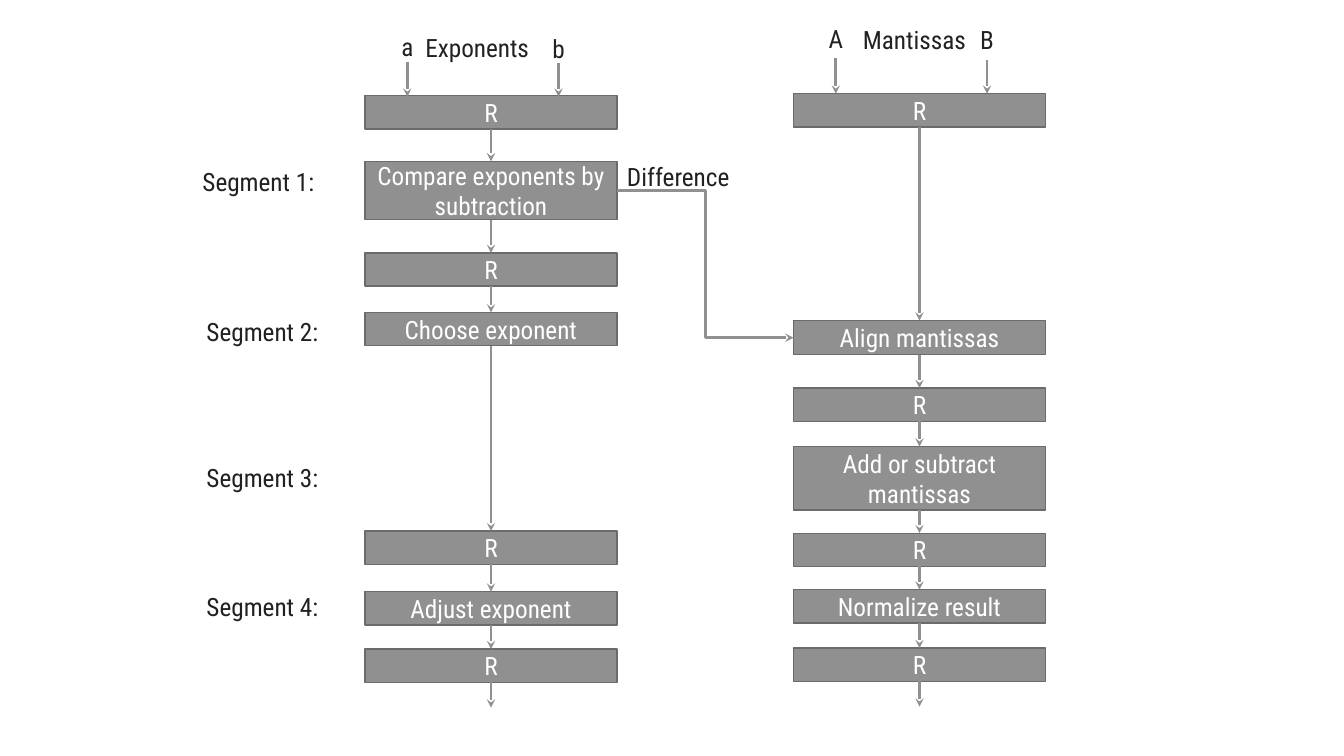
from dataclasses import dataclass

from lxml import etree
from pptx import Presentation
from pptx.dml.color import RGBColor
from pptx.enum import shapes, text
from pptx.oxml import ns
from pptx.util import Inches, Pt


@dataclass(frozen=True)
class Theme:
    font: str = "Roboto Condensed"
    size: float = 18
    ink: str = "212121"
    box_text: str = "FFFFFF"
    fill: str = "909090"
    border: str = "6B6B6B"
    border_width: float = 1
    arrow_width: float = 2


THEME = Theme()
BOX_WIDTH = 2.5
EXIT_LENGTH = 0.25
LABEL_WIDTH, LETTER_WIDTH, LABEL_HEIGHT = 1.5, 0.5, 0.4

# Each stage: wording, top, height
EXPONENT_STAGES = [
    ("R", 0.95, 0.33),
    ("Compare exponents by subtraction", 1.6, 0.58),
    ("R", 2.51, 0.33),
    ("Choose exponent", 3.1, 0.33),
    ("R", 5.27, 0.33),
    ("Adjust exponent", 5.87, 0.33),
    ("R", 6.44, 0.33),
]
MANTISSA_STAGES = [
    ("R", 0.93, 0.33),
    ("Align mantissas", 3.18, 0.34),
    ("R", 3.85, 0.33),
    ("Add or subtract mantissas", 4.43, 0.63),
    ("R", 5.29, 0.33),
    ("Normalize result", 5.85, 0.33),
    ("R", 6.43, 0.33),
]
EXPONENT_LEFT, MANTISSA_LEFT = 3.62, 7.87

# Each input: letter, middle, label top, arrow top, arrow end
INPUTS = [
    ("a", 4.04, 0.26, 0.62, 0.96),
    ("b", 5.54, 0.28, 0.63, 0.96),
    ("A", 8.29, 0.18, 0.58, 0.93),
    ("B", 9.79, 0.19, 0.6, 0.93),
]
# Each label: wording, left, top
LABELS = [
    ("Exponents", 4.12, 0.27),
    ("Mantissas", 8.46, 0.19),
    ("Difference", 6.12, 1.55),
    ("Segment 1:", 1.91, 1.6),
    ("Segment 2:", 1.95, 3.09),
    ("Segment 3:", 1.95, 4.54),
    ("Segment 4:", 1.95, 5.82),
]


def color(value):
    return RGBColor.from_string(value)


def write(frame, wording, ink, align):
    frame.word_wrap = True
    para = frame.paragraphs[0]
    para.alignment = align
    span = para.add_run()
    span.text = wording
    span.font.name = THEME.font
    span.font.size = Pt(THEME.size)
    span.font.color.rgb = color(ink)


def add_label(page, wording, left, top, width=LABEL_WIDTH, align=text.PP_ALIGN.LEFT):
    box = page.shapes.add_textbox(
        Inches(left), Inches(top), Inches(width), Inches(LABEL_HEIGHT))
    write(box.text_frame, wording, THEME.ink, align)


def add_stage(page, wording, left, top, height):
    box = page.shapes.add_shape(
        shapes.MSO_SHAPE.RECTANGLE,
        Inches(left), Inches(top), Inches(BOX_WIDTH), Inches(height))
    box.shadow.inherit = False
    box.fill.solid()
    box.fill.fore_color.rgb = color(THEME.fill)
    box.line.color.rgb = color(THEME.border)
    box.line.width = Pt(THEME.border_width)
    box.text_frame.vertical_anchor = text.MSO_ANCHOR.MIDDLE
    write(box.text_frame, wording, THEME.box_text, text.PP_ALIGN.CENTER)
    return box


def add_arrow(page, start=(0, 0), end=(0, 0), kind=shapes.MSO_CONNECTOR.STRAIGHT):
    arrow = page.shapes.add_connector(
        kind, *(Inches(value) for value in (*start, *end)))
    arrow.line.color.rgb = color(THEME.fill)
    arrow.line.width = Pt(THEME.arrow_width)
    etree.SubElement(arrow.line._get_or_add_ln(), ns.qn("a:tailEnd"), type="stealth")
    etree.SubElement(arrow._element.spPr, ns.qn("a:effectLst"))
    return arrow


def add_column(page, left, stages):
    """Stack the stages, join each to the next and add the exit arrow."""
    boxes = [add_stage(page, wording, left, top, height)
             for wording, top, height in stages]
    for upper, lower in zip(boxes, boxes[1:]):
        arrow = add_arrow(page)
        arrow.begin_connect(upper, 2)
        arrow.end_connect(lower, 0)
    _, top, height = stages[-1]
    middle, bottom = left + BOX_WIDTH / 2, top + height
    leaving = add_arrow(page, (middle, bottom), (middle, bottom + EXIT_LENGTH))
    leaving.begin_connect(boxes[-1], 2)
    return boxes


def main():
    deck = Presentation()
    deck.slide_width, deck.slide_height = Inches(13.33), Inches(7.5)
    page = deck.slides.add_slide(deck.slide_layouts[6])

    exponents = add_column(page, EXPONENT_LEFT, EXPONENT_STAGES)
    mantissas = add_column(page, MANTISSA_LEFT, MANTISSA_STAGES)
    difference = add_arrow(page, kind=shapes.MSO_CONNECTOR.ELBOW)
    difference.begin_connect(exponents[1], 3)
    difference.end_connect(mantissas[1], 1)

    for letter, middle, label_top, arrow_top, arrow_end in INPUTS:
        add_label(page, letter, middle - LETTER_WIDTH / 2, label_top,
                  LETTER_WIDTH, text.PP_ALIGN.CENTER)
        add_arrow(page, (middle, arrow_top), (middle, arrow_end))
    for wording, left, top in LABELS:
        add_label(page, wording, left, top)

    deck.save("out.pptx")


if __name__ == "__main__":
    main()
